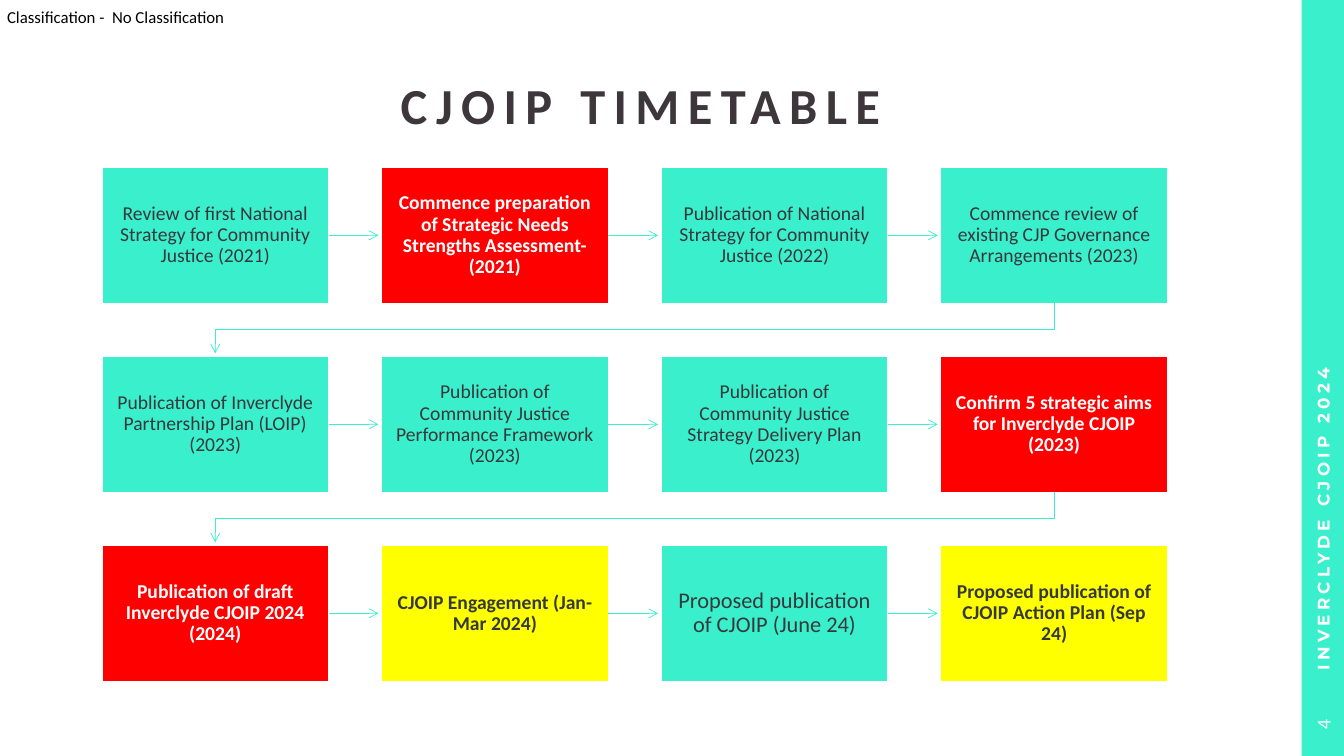
from pptx import Presentation
from pptx.dml.color import RGBColor
from pptx.enum.shapes import MSO_CONNECTOR, MSO_SHAPE
from pptx.enum.text import MSO_ANCHOR, MSO_AUTO_SIZE, PP_ALIGN
from pptx.oxml.ns import qn
from pptx.util import Inches, Pt
from lxml import etree

RECT = MSO_SHAPE.RECTANGLE
STRAIGHT = MSO_CONNECTOR.STRAIGHT
MIDDLE, TOP = MSO_ANCHOR.MIDDLE, MSO_ANCHOR.TOP
LEFT, CENTER = PP_ALIGN.LEFT, PP_ALIGN.CENTER

theme = {
    "teal": RGBColor(0x3A, 0xEF, 0xCC), "red": RGBColor(0xFF, 0, 0),
    "yellow": RGBColor(0xFF, 0xFF, 0), "white": RGBColor(0xFF, 0xFF, 0xFF),
    "black": RGBColor(0, 0, 0), "ink": RGBColor(0x36, 0x39, 0x3B),
    "head": RGBColor(0x3D, 0x36, 0x3A),
    "font": "Calibri", "side": "Montserrat",
    "title": 36, "big": 16, "step": 14, "small": 12,
}

# Grid of steps, in inches
WIDE, HIGH = 13.33, 7.5
X0, Y0 = 1.01, 1.66
BOX_W, BOX_H = 2.25, 1.35
STEP_X, STEP_Y = 8.32 / 3, 1.875
GAP = 0.03
BAR = 0.42


def write(shape, text, size, color, bold=False, align=CENTER, anchor=MIDDLE,
          inset=(0, 0, 0, 0), font=theme["font"], track=0, lead=1.0):
    frame = shape.text_frame
    frame.word_wrap = True
    frame.auto_size = MSO_AUTO_SIZE.NONE
    frame.vertical_anchor = anchor
    (frame.margin_left, frame.margin_top,
     frame.margin_right, frame.margin_bottom) = [Inches(i) for i in inset]
    para = frame.paragraphs[0]
    para.alignment = align
    para.line_spacing = lead
    run = para.add_run()
    run.text = text
    run.font.name = font
    run.font.size = Pt(size)
    run.font.bold = bold
    run.font.color.rgb = color
    if track:
        run.font._element.set("spc", str(track * 100))


def arrow(shape):
    shape.line.color.rgb = theme["teal"]
    shape.line.width = Pt(0.5)
    tail = etree.SubElement(shape.line._get_or_add_ln(), qn("a:tailEnd"))
    tail.set("type", "arrow")
    props = shape._element.spPr
    if props.find(qn("a:effectLst")) is None:
        etree.SubElement(props, qn("a:effectLst"))


deck = Presentation()
deck.slide_width, deck.slide_height = Inches(WIDE), Inches(HIGH)
slide = deck.slides.add_slide(deck.slide_layouts[5])
shapes = slide.shapes

# Side bar
bar = shapes.add_shape(RECT, Inches(WIDE - BAR), 0, Inches(BAR), Inches(HIGH))
bar.shadow.inherit = False
bar.fill.solid()
bar.fill.fore_color.rgb = theme["teal"]
bar.line.fill.background()

# Classification mark
mark = shapes.add_textbox(Inches(0.07), Inches(0.07), Inches(2.4), Inches(0.2))
write(mark, "Classification -  No Classification", theme["small"],
      theme["black"], align=LEFT, anchor=TOP)

# Title
title = shapes.title
title.left, title.top = Inches(0.82), Inches(0.63)
title.width, title.height = Inches(11.07), Inches(0.89)
write(title, "CJOIP TIMETABLE", theme["title"], theme["head"], True,
      track=6, lead=0.9)

# Footer and page number, turned along the bar
foot = shapes.add_textbox(Inches(9.68), Inches(3.23), Inches(6.88), Inches(BAR))
foot.rotation = 270
write(foot, "INVERCLYDE CJOIP 2024", theme["small"], theme["white"], True,
      align=LEFT, inset=(0.23, 0.05, 0.1, 0.05), font=theme["side"], track=3)
page = shapes.add_textbox(Inches(12.81), Inches(6.98), Inches(0.62), Inches(BAR))
page.rotation = 270
write(page, "4", theme["step"], theme["white"], inset=(0.1, 0.05, 0.1, 0.05))

# Steps, row by row: fill and text
rows = [
    [("teal", "Review of first National Strategy for Community Justice (2021)"),
     ("red", "Commence preparation of Strategic Needs Strengths Assessment- (2021)"),
     ("teal", "Publication of National Strategy for Community Justice (2022)"),
     ("teal", "Commence review of existing CJP Governance Arrangements (2023)")],
    [("teal", "Publication of Inverclyde Partnership Plan (LOIP) (2023)"),
     ("teal", "Publication of Community Justice Performance Framework (2023)"),
     ("teal", "Publication of Community Justice Strategy Delivery Plan (2023)"),
     ("red", "Confirm 5 strategic aims for Inverclyde CJOIP (2023)")],
    [("red", "Publication of draft Inverclyde CJOIP 2024 (2024)"),
     ("yellow", "CJOIP Engagement (Jan-Mar 2024)"),
     ("teal", "Proposed publication of CJOIP (June 24)"),
     ("yellow", "Proposed publication of CJOIP Action Plan (Sep 24)")],
]
large = (2, 2)

for r, row in enumerate(rows):
    y = Y0 + r * STEP_Y
    for c, (fill, text) in enumerate(row):
        x = X0 + c * STEP_X
        box = shapes.add_shape(RECT, Inches(x), Inches(y),
                               Inches(BOX_W), Inches(BOX_H))
        box.shadow.inherit = False
        box.fill.solid()
        box.fill.fore_color.rgb = theme[fill]
        box.line.color.rgb = theme["white"]
        box.line.width = Pt(1)
        size = theme["big" if (r, c) == large else "step"]
        ink = theme["white" if fill == "red" else "ink"]
        write(box, text, size, ink, fill != "teal",
              inset=[size / 128] * 4, lead=0.9)

        # Arrow to the next step in the row
        if c < len(row) - 1:
            mid = Inches(y + BOX_H / 2)
            link = shapes.add_connector(
                STRAIGHT, Inches(x + BOX_W), mid,
                Inches(x + STEP_X - GAP), mid)
            arrow(link)

    # Bent arrow from the end of the row to the start of the next
    if r < len(rows) - 1:
        start, end = X0 + 3 * STEP_X + BOX_W / 2, X0 + BOX_W / 2
        low, next_y = y + BOX_H, y + STEP_Y
        turn = (low + next_y) / 2
        points = [(Inches(px), Inches(py)) for px, py in (
            (start, low), (start, turn), (end, turn), (end, next_y - GAP))]
        pen = shapes.build_freeform(*points[0], scale=1.0)
        pen.add_line_segments(points[1:], close=False)
        bend = pen.convert_to_shape()
        bend.shadow.inherit = False
        bend.fill.background()
        arrow(bend)

deck.save("out.pptx")
